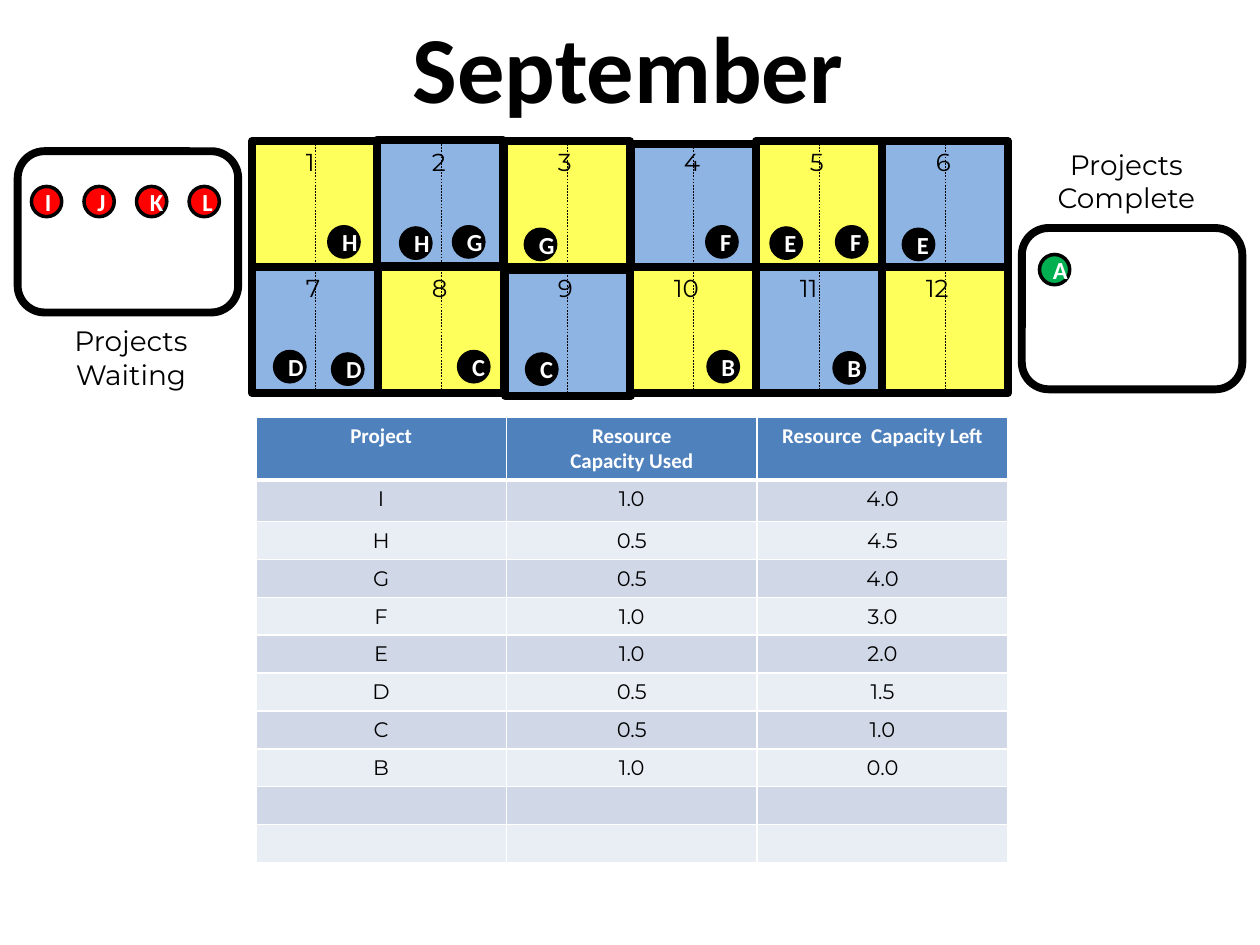
from lxml.etree import SubElement
from pptx import Presentation
from pptx.dml.color import RGBColor
from pptx.enum.dml import MSO_LINE
from pptx.enum.shapes import MSO_CONNECTOR, MSO_SHAPE
from pptx.enum.text import MSO_ANCHOR, MSO_AUTO_SIZE, PP_ALIGN
from pptx.oxml.ns import qn
from pptx.util import Inches, Pt

THEME = {
    "black": RGBColor(0, 0, 0),
    "white": RGBColor(255, 255, 255),
    "yellow": RGBColor(0xFF, 0xFF, 0x5B),
    "blue": RGBColor(0x8E, 0xB4, 0xE3),
    "red": RGBColor(255, 0, 0),
    "green": RGBColor(0, 0xB0, 0x50),
    "header": RGBColor(0x4F, 0x81, 0xBD),
    "bands": [RGBColor(0xD0, 0xD8, 0xE8), RGBColor(0xE9, 0xED, 0xF4)],
    "title": {"name": "Calibri", "size": Pt(54), "bold": True},
    "token": {"name": "Calibri", "size": Pt(14), "bold": True},
    "month": {"name": "Montserrat", "size": Pt(14), "bold": False},
    "caption": {"name": "Montserrat", "size": Pt(16), "bold": False},
    "heading": {"name": "Calibri", "size": Pt(12), "bold": True},
    "body": {"name": "Montserrat", "size": Pt(12), "bold": False},
}


def write(frame, text, style, color, align=PP_ALIGN.CENTER):
    frame.text = text
    for paragraph in frame.paragraphs:
        paragraph.alignment = align
        for run in paragraph.runs:
            for attribute, value in THEME[style].items():
                setattr(run.font, attribute, value)
            run.font.color.rgb = THEME[color]


def draw(kind, left, top, width, height, fill, weight):
    shape = slide.shapes.add_shape(
        kind, Inches(left), Inches(top), Inches(width), Inches(height))
    shape.shadow.inherit = False
    if fill:
        shape.fill.solid()
        shape.fill.fore_color.rgb = THEME[fill]
    else:
        shape.fill.background()
    shape.line.color.rgb = THEME["black"]
    shape.line.width = Pt(weight)
    return shape


deck = Presentation()
deck.slide_width, deck.slide_height = Inches(10), Inches(7.5)
slide = deck.slides.add_slide(deck.slide_layouts[6])

nudges = {2: (-0.01, -0.01), 4: (0.01, 0.02), 9: (0.01, 0.02)}
for month in range(1, 13):
    row, column = divmod(month - 1, 6)
    dx, dy = nudges.get(month, (0, 0))
    draw(MSO_SHAPE.RECTANGLE, 2 + column + dx, 1.12 + row + dy, 1, 1,
         ("yellow", "blue")[(row + column) % 2], 4.5)

for column in range(6):
    x = Inches(2.5 + column)
    divider = slide.shapes.add_connector(
        MSO_CONNECTOR.STRAIGHT, x, Inches(1.12), x, Inches(3.12))
    divider.line.color.rgb = THEME["black"]
    divider.line.width = Pt(0.25)
    divider.line.dash_style = MSO_LINE.DASH
    SubElement(divider._element.spPr, qn("a:effectLst"))

for left, top, width, height, text, style, align in [
    *[(2.33 + (month - 1) % 6 - (0.08 if month > 9 else 0), 1.12 + (month - 1) // 6,
       0.58 if month == 11 else 0.5 if month > 9 else 0.42, 0.34,
       str(month), "month", PP_ALIGN.LEFT) for month in range(1, 13)],
    (3.16, 0.02, 3.65, 1.01, "September", "title", PP_ALIGN.CENTER),
    (0.24, 2.52, 1.6, 0.64, "Projects Waiting", "caption", PP_ALIGN.CENTER),
    (8.14, 1.12, 1.6, 0.64, "Projects Complete", "caption", PP_ALIGN.CENTER),
]:
    label = slide.shapes.add_textbox(
        Inches(left), Inches(top), Inches(width), Inches(height))
    label.text_frame.word_wrap = style != "title"
    label.text_frame.auto_size = MSO_AUTO_SIZE.SHAPE_TO_FIT_TEXT
    write(label.text_frame, text, style, "black", align)
    if style == "title":
        properties = label.text_frame.paragraphs[0].runs[0].font._element
        outline = SubElement(properties, qn("a:ln"), w=str(Pt(1)))
        SubElement(SubElement(outline, qn("a:solidFill")), qn("a:srgbClr"),
                   val=str(THEME["black"]))
        properties.insert(0, outline)

for left, top in [(0.14, 1.2), (8.11, 1.81)]:
    draw(MSO_SHAPE.ROUNDED_RECTANGLE, left, top, 1.75, 1.28, None, 4.5)

waiting = [(name, 0.25 + 0.417 * i, 1.48, "red") for i, name in enumerate("IJKL")]
active = [
    ("H", 2.61, 1.8), ("H", 3.18, 1.81), ("G", 3.6, 1.8), ("G", 4.17, 1.82),
    ("F", 5.61, 1.8), ("E", 6.12, 1.81), ("F", 6.64, 1.8), ("E", 7.17, 1.82),
    ("D", 2.18, 2.79), ("D", 2.64, 2.81), ("C", 3.64, 2.79), ("C", 4.18, 2.81),
    ("B", 5.62, 2.79), ("B", 6.62, 2.8),
]
complete = [("A", 8.25, 2.02, "green")]
for name, left, top, fill in waiting + [(*item, "black") for item in active] + complete:
    token = draw(MSO_SHAPE.OVAL, left, top, 0.24, 0.24, fill, 2)
    token.text_frame.vertical_anchor = MSO_ANCHOR.MIDDLE
    write(token.text_frame, name, "token", "white")

capacity = [
    ("Project", "Resource\nCapacity Used", "Resource  Capacity Left"),
    ("I", "1.0", "4.0"),
    ("H", "0.5", "4.5"),
    ("G", "0.5", "4.0"),
    ("F", "1.0", "3.0"),
    ("E", "1.0", "2.0"),
    ("D", "0.5", "1.5"),
    ("C", "0.5", "1.0"),
    ("B", "1.0", "0.0"),
    ("", "", ""),
    ("", "", ""),
]
row_heights = [0.5, 0.33] + [0.3] * 9
table = slide.shapes.add_table(
    len(capacity), 3, Inches(2.03), Inches(3.31),
    Inches(5.97), Inches(sum(row_heights))).table
for column in table.columns:
    column.width = Inches(1.99)
for r, values in enumerate(capacity):
    table.rows[r].height = Inches(row_heights[r])
    for c, value in enumerate(values):
        cell = table.cell(r, c)
        write(cell.text_frame, value, "body" if r else "heading",
              "black" if r else "white")
        if not value:
            SubElement(cell.text_frame.paragraphs[0]._p, qn("a:endParaRPr"),
                       sz=str(THEME["body"]["size"].pt * 100).split(".")[0])
        borders = cell._tc.get_or_add_tcPr()
        for side in ("lnL", "lnR", "lnT", "lnB"):
            heavy = (r, side) in [(0, "lnB"), (1, "lnT")]
            edge = SubElement(borders, qn(f"a:{side}"), w=str(Pt(3 if heavy else 1)))
            SubElement(SubElement(edge, qn("a:solidFill")), qn("a:srgbClr"),
                       val=str(THEME["white"]))
        cell.fill.solid()
        cell.fill.fore_color.rgb = THEME["bands"][(r - 1) % 2] if r else THEME["header"]

deck.save("out.pptx")
